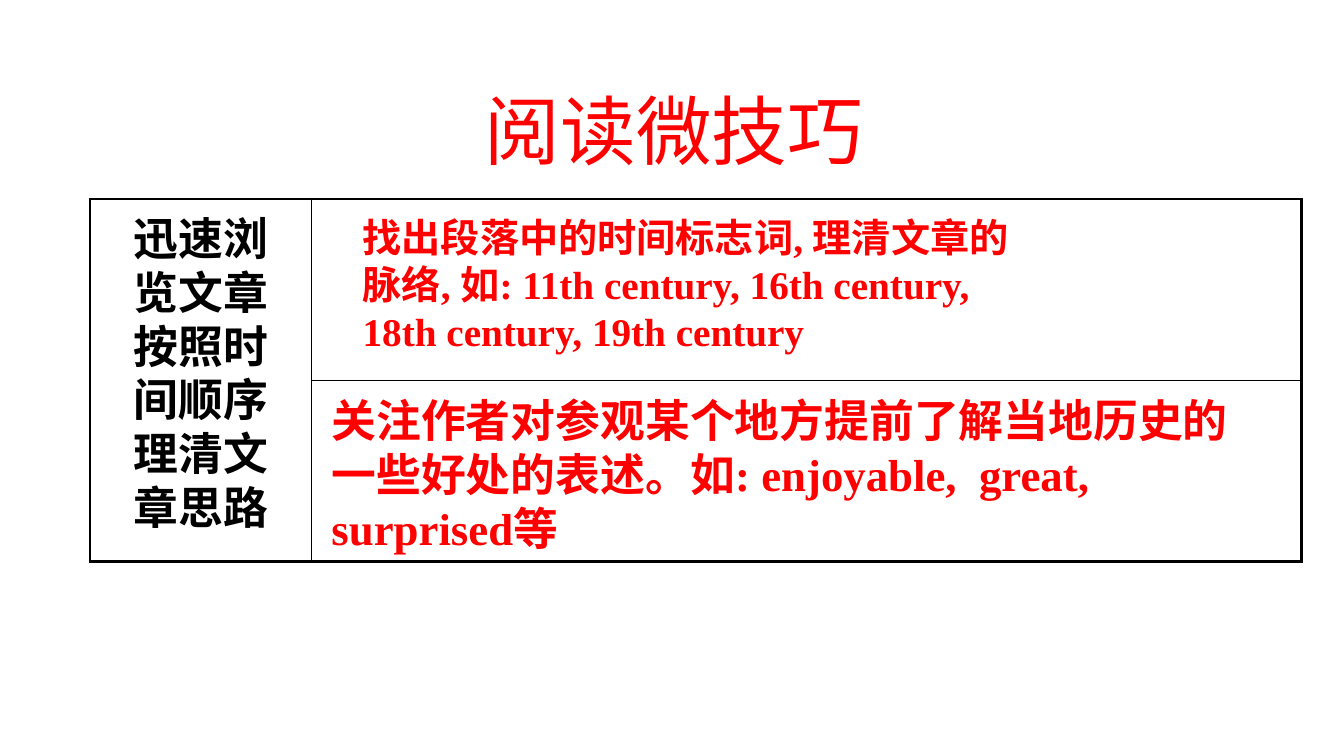
from lxml.etree import SubElement
from pptx import Presentation
from pptx.dml.color import RGBColor
from pptx.enum.text import MSO_AUTO_SIZE, PP_ALIGN
from pptx.oxml.ns import qn
from pptx.util import Pt

RED = "FF0000"
BLACK = "000000"


def color(hex_string):
    return RGBColor.from_string(hex_string)


class SlideBuilder:
    body_font = "Times New Roman"
    title_font = "Calibri"
    outer_line = 2
    inner_line = 1

    def __init__(self, deck):
        self.page = deck.slides.add_slide(deck.slide_layouts[6])

    def text(self, left, top, width, height, lines, size, hex_string,
             font=body_font, bold=True, wrap=True, align=PP_ALIGN.LEFT):
        box = self.page.shapes.add_textbox(Pt(left), Pt(top), Pt(width), Pt(height))
        frame = box.text_frame
        frame.word_wrap = wrap
        frame.auto_size = MSO_AUTO_SIZE.SHAPE_TO_FIT_TEXT
        for index, line in enumerate(lines):
            para = frame.add_paragraph() if index else frame.paragraphs[0]
            para.alignment = align
            span = para.add_run()
            span.text = line
            span.font.name = font
            span.font.size = Pt(size)
            span.font.bold = bold
            span.font.color.rgb = color(hex_string)

    def border(self, cell, side, width):
        line = SubElement(cell._tc.get_or_add_tcPr(), qn(f"a:ln{side}"), w=str(Pt(width)))
        fill = SubElement(line, qn("a:solidFill"))
        SubElement(fill, qn("a:srgbClr"), val=BLACK)

    def grid(self, left, top, widths, heights):
        """Add an unfilled table whose first column is one merged cell."""
        frame = self.page.shapes.add_table(
            len(heights), len(widths), Pt(left), Pt(top), Pt(sum(widths)), Pt(sum(heights)))
        table = frame.table
        table.first_row = table.horz_banding = False
        for column, width in zip(table.columns, widths):
            column.width = Pt(width)
        for row, height in zip(table.rows, heights):
            row.height = Pt(height)
        last_row, last_column = len(heights) - 1, len(widths) - 1
        table.cell(0, 0).merge(table.cell(last_row, 0))
        for r in range(len(heights)):
            for c in range(len(widths)):
                cell = table.cell(r, c)
                outer_sides = {
                    "L": c == 0,
                    "R": c == last_column,
                    "T": c == 0 or r == 0,
                    "B": c == 0 or r == last_row,
                }
                for side, is_outer in outer_sides.items():
                    self.border(cell, side, self.outer_line if is_outer else self.inner_line)
                cell.fill.background()


def main():
    deck = Presentation()
    deck.slide_width, deck.slide_height = Pt(960), Pt(540)
    slide = SlideBuilder(deck)
    slide.grid(64.2, 142, [158.4, 707], [129.6, 129.6])
    slide.text(337.7, 56.2, 287.3, 138.2, ["阅读微技巧"], 54, RED,
               font=SlideBuilder.title_font, bold=False, wrap=False, align=PP_ALIGN.CENTER)
    slide.text(88.6, 147, 121, 278.6,
               ["迅速浏", "览文章", "按照时", "间顺序", "理清文", "章思路"], 32, BLACK)
    slide.text(229.7, 277.2, 685.4, 123.8,
               ["关注作者对参观某个地方提前了解当地历史的一些好处的表述。"
                "如: enjoyable,  great,  surprised等"], 32, RED)
    slide.text(252, 149, 480.2, 108.7,
               ["找出段落中的时间标志词, 理清文章的脉络, 如: 11th century, "
                "16th century, 18th century, 19th century"], 28, RED)
    deck.save("out.pptx")


if __name__ == "__main__":
    main()
